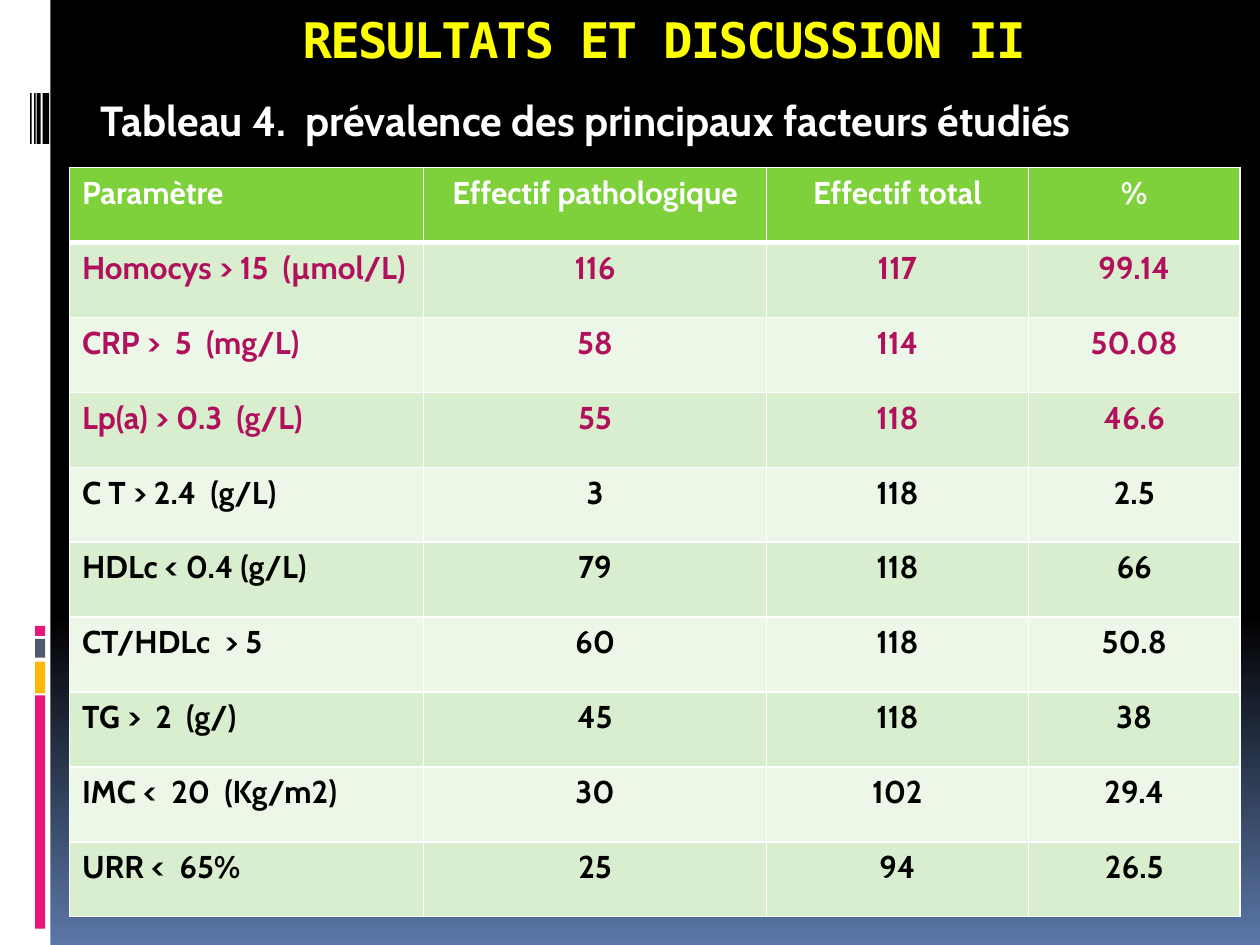
from pptx import Presentation
from pptx.dml.color import RGBColor
from pptx.enum.shapes import MSO_SHAPE
from pptx.enum.text import PP_ALIGN
from pptx.oxml.ns import qn
from pptx.util import Cm, Pt
from lxml.etree import SubElement

WHITE = RGBColor(0xFF, 0xFF, 0xFF)
BLACK = RGBColor(0x00, 0x00, 0x00)
BLUE = RGBColor(0x5B, 0x77, 0xA8)
PINK = RGBColor(0xEA, 0x15, 0x7A)
AMBER = RGBColor(0xFE, 0xB8, 0x0A)
SLATE = RGBColor(0x4E, 0x5B, 0x6F)
YELLOW = RGBColor(0xFF, 0xFF, 0x00)
GREEN = RGBColor(0x7F, 0xD1, 0x3B)
GREEN_BAND = RGBColor(0xD8, 0xEE, 0xCE)
PALE_BAND = RGBColor(0xEC, 0xF7, 0xE8)
PLUM = RGBColor(0xB0, 0x10, 0x5C)

BODY_FONT = "Cabin"
TITLE_FONT = "DejaVu Sans Mono"

SIDE_BARS = [
    (0, 0, 1.02, 19.05, WHITE),
    (0.71, 14.02, 0.2, 4.7, PINK),
    (0.71, 13.34, 0.2, 0.64, AMBER),
    (0.71, 12.88, 0.2, 0.38, SLATE),
    (0.71, 12.62, 0.2, 0.2, PINK),
    (0.86, 1.88, 0.13, 1.02, BLACK),
    (0.74, 1.88, 0.08, 1.02, BLACK),
    (0.69, 1.88, 0.03, 1.02, BLACK),
    (0.61, 1.88, 0.03, 1.02, BLACK),
]

COLUMN_WIDTHS = [7.14, 6.91, 5.28, 4.27]
ROW_HEIGHT = 1.51
HIGHLIGHTED_ROWS = 3
ROWS = [
    ("Paramètre", "Effectif pathologique", "Effectif total", "%"),
    ("Homocys > 15  (µmol/L)", "116", "117", "99.14"),
    ("CRP >  5  (mg/L)", "58", "114", "50.08"),
    ("Lp(a) > 0.3  (g/L)", "55", "118", "46.6"),
    ("C T > 2.4  (g/L)", "3", "118", "2.5"),
    ("HDLc < 0.4 (g/L)", "79", "118", "66"),
    ("CT/HDLc  > 5", "60", "118", "50.8"),
    ("TG >  2  (g/)", "45", "118", "38"),
    ("IMC <  20  (Kg/m2)", "30", "102", "29.4"),
    ("URR <  65%", "25", "94", "26.5"),
]


def paint_background(page):
    fill = page.background.fill
    fill.gradient()
    fill.gradient_angle = 270
    for stop, position, color in zip(fill.gradient_stops, (0.65, 1), (BLACK, BLUE)):
        stop.position = position
        stop.color.rgb = color


def add_bar(page, left, top, width, height, color):
    bar = page.shapes.add_shape(
        MSO_SHAPE.RECTANGLE, Cm(left), Cm(top), Cm(width), Cm(height))
    bar.shadow.inherit = False
    bar.fill.solid()
    bar.fill.fore_color.rgb = color
    bar.line.fill.background()


def write_text(frame, text, size, color, font=BODY_FONT, align=PP_ALIGN.LEFT):
    para = frame.paragraphs[0]
    para.alignment = align
    span = para.add_run()
    span.text = text
    span.font.name = font
    span.font.size = Pt(size)
    span.font.bold = True
    span.font.color.rgb = color
    return span


def add_text_box(page, left, top, width, height):
    box = page.shapes.add_textbox(Cm(left), Cm(top), Cm(width), Cm(height))
    box.text_frame.word_wrap = True
    return box.text_frame


def add_title(page):
    frame = add_text_box(page, 2.59, 0, 21.59, 1.19)
    frame.margin_top = Cm(0.2)
    frame.margin_bottom = Cm(0)
    span = write_text(frame, "RESULTATS ET DISCUSSION II", 28, YELLOW,
                      TITLE_FONT, PP_ALIGN.CENTER)
    span.font._element.set("spc", "-100")


def add_caption(page):
    frame = add_text_box(page, 1.78, 1.78, 22.63, 1.27)
    write_text(frame, "Tableau 4.  prévalence des principaux facteurs étudiés", 24, WHITE)


def draw_borders(cell, top, bottom):
    properties = cell._tc.get_or_add_tcPr()
    for side, width in (("L", 1), ("R", 1), ("T", top), ("B", bottom)):
        line = SubElement(properties, qn(f"a:ln{side}"), w=str(Pt(width)))
        paint = SubElement(line, qn("a:solidFill"))
        SubElement(paint, qn("a:srgbClr"), val=str(WHITE))


def row_colors(row):
    if row == 0:
        return GREEN, WHITE
    band = GREEN_BAND if row % 2 else PALE_BAND
    return band, PLUM if row <= HIGHLIGHTED_ROWS else BLACK


def add_prevalence_table(page):
    table = page.shapes.add_table(
        len(ROWS), len(COLUMN_WIDTHS), Cm(1.4), Cm(3.38),
        Cm(sum(COLUMN_WIDTHS)), Cm(ROW_HEIGHT * len(ROWS))).table
    for column, width in zip(table.columns, COLUMN_WIDTHS):
        column.width = Cm(width)
    for row, values in enumerate(ROWS):
        table.rows[row].height = Cm(ROW_HEIGHT)
        band, ink = row_colors(row)
        for column, value in enumerate(values):
            cell = table.cell(row, column)
            draw_borders(cell, 3 if row == 1 else 1, 3 if row == 0 else 1)
            cell.fill.solid()
            cell.fill.fore_color.rgb = band
            align = PP_ALIGN.CENTER if column else PP_ALIGN.LEFT
            write_text(cell.text_frame, value, 18, ink, align=align)


def main():
    deck = Presentation()
    deck.slide_width = Cm(25.4)
    deck.slide_height = Cm(19.05)
    page = deck.slides.add_slide(deck.slide_layouts[6])
    paint_background(page)
    for bar in SIDE_BARS:
        add_bar(page, *bar)
    add_title(page)
    add_prevalence_table(page)
    add_caption(page)
    deck.save("out.pptx")


if __name__ == "__main__":
    main()
